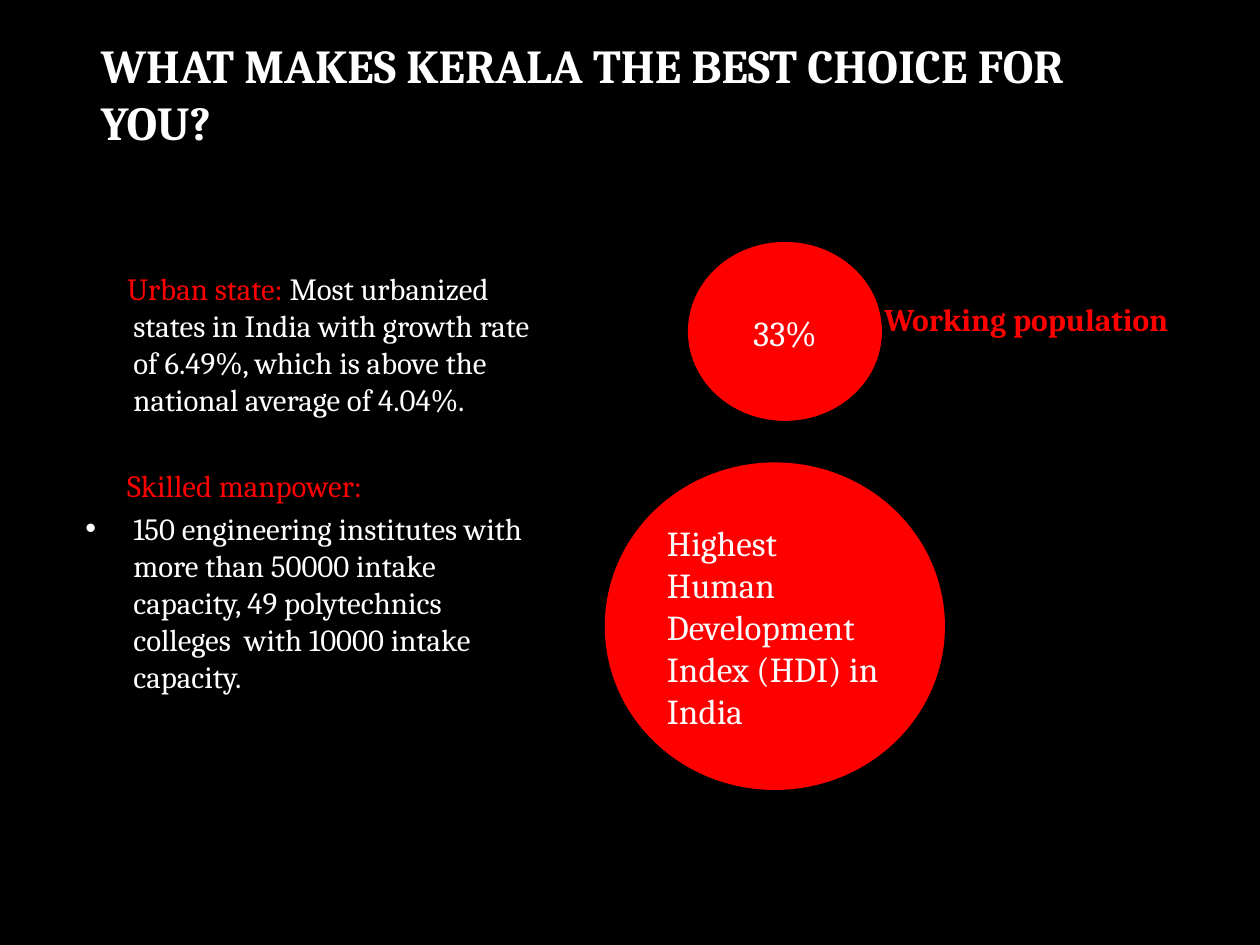
from lxml import etree
from pptx import Presentation
from pptx.dml.color import RGBColor
from pptx.enum.shapes import MSO_SHAPE
from pptx.enum.text import MSO_ANCHOR, PP_ALIGN
from pptx.oxml.ns import qn
from pptx.util import Inches, Pt

OVAL = MSO_SHAPE.OVAL
TOP, MIDDLE = MSO_ANCHOR.TOP, MSO_ANCHOR.MIDDLE
LEFT, CENTER = PP_ALIGN.LEFT, PP_ALIGN.CENTER

BLACK = RGBColor(0x00, 0x00, 0x00)
WHITE = RGBColor(0xFF, 0xFF, 0xFF)
RED = RGBColor(0xFF, 0x00, 0x00)

prs = Presentation()
prs.slide_width, prs.slide_height = Inches(10), Inches(7.5)
COL, ROW = prs.slide_width / 100, prs.slide_height / 75


def cells(left, top, width, height):
    """Turn grid columns and rows into slide lengths."""
    return int(left * COL), int(top * ROW), int(width * COL), int(height * ROW)


def write(paragraph, text, size=20, color=WHITE, bold=False, align=LEFT):
    """Add one formatted run to a paragraph."""
    paragraph.alignment = align
    run = paragraph.add_run()
    run.text = text
    run.font.name = "Cambria"
    run.font.size = Pt(size)
    run.font.bold = bold
    run.font.color.rgb = color


slide = prs.slides.add_slide(prs.slide_layouts[5])
slide.background.fill.solid()
slide.background.fill.fore_color.rgb = BLACK

# Title
title = slide.shapes.title
title.left, title.top, title.width, title.height = cells(7, 2.7, 86.2, 9.4)
title.text_frame.vertical_anchor = MIDDLE
write(title.text_frame.paragraphs[0], "WHAT MAKES KERALA THE BEST CHOICE FOR YOU?",
      size=27, bold=True)

# Reasons: red lead-in, white text, space before, first-line indent, bullet
reasons = [
    ("Urban state: ", "Most urbanized states in India with growth rate of 6.49%, "
     "which is above the national average of 4.04%.", 0, -0.05, False),
    ("Skilled manpower:", "", 28, -0.05, False),
    ("", "150 engineering institutes with more than 50000 intake capacity, "
     "49 polytechnics colleges  with 10000 intake capacity.", 3.5, -0.38, True),
]
body = slide.shapes.add_textbox(*cells(5.8, 20.9, 37.5, 37.4)).text_frame
body.word_wrap = True
body.vertical_anchor = TOP
for number, (lead, detail, space, indent, bulleted) in enumerate(reasons):
    reason = body.add_paragraph() if number else body.paragraphs[0]
    reason.space_before = Pt(space)
    properties = reason._p.get_or_add_pPr()
    properties.set("marL", str(Inches(0.38)))
    properties.set("indent", str(Inches(indent)))
    if bulleted:
        etree.SubElement(properties, qn("a:buFont")).set("typeface", "Arial")
        etree.SubElement(properties, qn("a:buChar")).set("char", "•")
    for text, color in ((lead, RED), (detail, WHITE)):
        if text:
            write(reason, text, size=17.6, color=color)

# Red circles
circles = [
    ("Highest Human Development Index (HDI) in India", (48, 36.7, 27, 26), LEFT, None),
    ("33%", (54.6, 19.2, 15.4, 14.2), CENTER, Pt(25)),
]
for fact, place, align, line_spacing in circles:
    circle = slide.shapes.add_shape(OVAL, *cells(*place))
    circle.shadow.inherit = False
    circle.fill.solid()
    circle.fill.fore_color.rgb = RED
    circle.line.fill.background()
    circle.text_frame.word_wrap = True
    circle.text_frame.vertical_anchor = MIDDLE
    paragraph = circle.text_frame.paragraphs[0]
    paragraph.line_spacing = line_spacing
    write(paragraph, fact, align=align)

# Label beside the small circle
population = slide.shapes.add_textbox(*cells(69.2, 23.3, 28.4, 4)).text_frame
population.word_wrap = False
write(population.paragraphs[0], "Working population", size=18, color=RED, bold=True)

prs.save("out.pptx")
